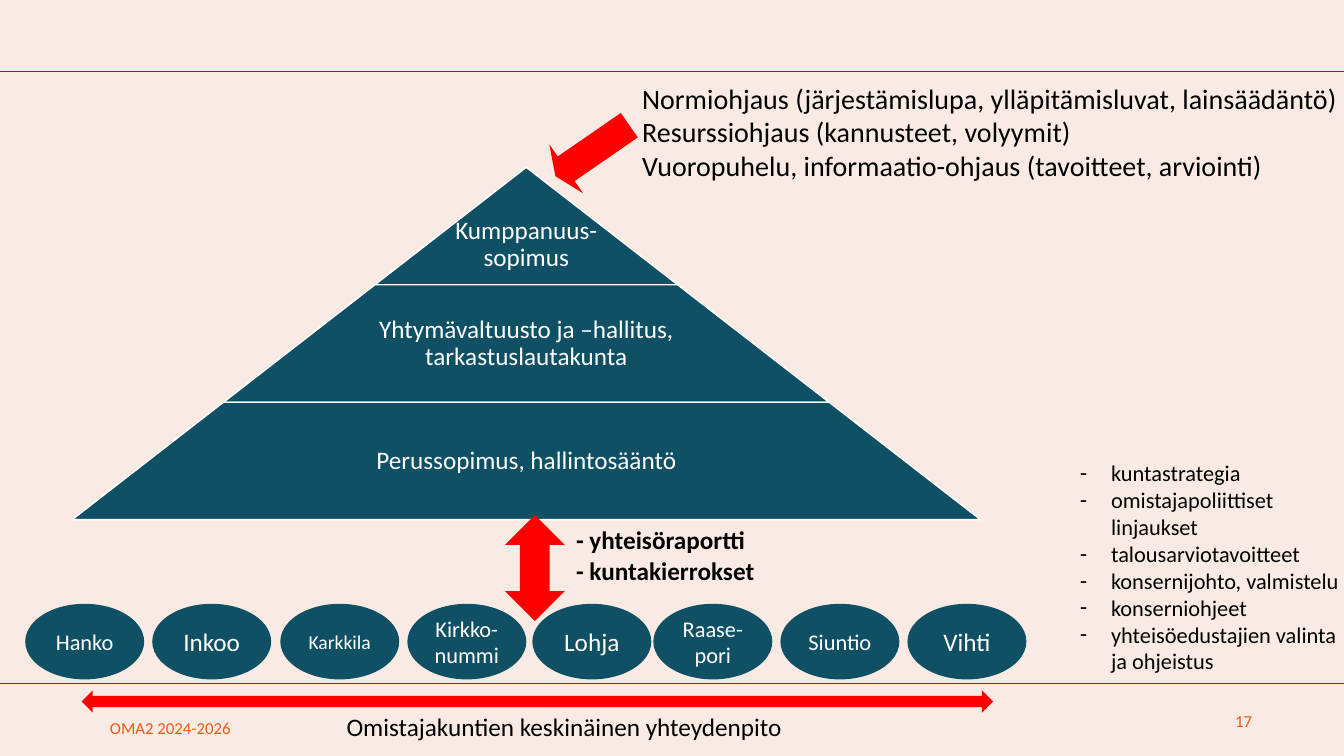
from lxml.etree import SubElement
from pptx import Presentation
from pptx.dml.color import RGBColor
from pptx.enum.shapes import MSO_CONNECTOR, MSO_SHAPE
from pptx.enum.text import MSO_ANCHOR, MSO_AUTO_SIZE, PP_ALIGN
from pptx.oxml.ns import qn
from pptx.util import Inches, Pt

COLORS = {"background": "F9EBE3", "rule": "115064", "teal": "0F5064",
          "red": "FF0000", "orange": "EB5C18", "white": "FFFFFF", "black": "000000"}
FONT = "Calibri"

# Content: pyramid tiers from the top as (text, text width, top inset)
TIERS = [("Kumppanuus-\vsopimus", 3, 0.41),
         ("Yhtymävaltuusto ja –hallitus, tarkastuslautakunta", 3.9, 0.03),
         ("Perussopimus, hallintosääntö", 5.86, 0.03)]
# Municipalities as (name, left, text size)
MUNICIPALITIES = [("Hanko", 0.25, 16), ("Inkoo", 1.51, 18), ("Karkkila", 2.78, 14),
                  ("Kirkko-nummi", 4.04, 16), ("Lohja", 5.28, 18),
                  ("Raase-pori", 6.48, 16), ("Siuntio", 7.74, 16), ("Vihti", 9, 18)]
STEERING = ["Normiohjaus (järjestämislupa, ylläpitämisluvat, lainsäädäntö)",
            "Resurssiohjaus (kannusteet, volyymit)",
            "Vuoropuhelu, informaatio-ohjaus (tavoitteet, arviointi)"]
DIALOGUE = ["- yhteisöraportti", "- kuntakierrokset"]
OWNER_TOOLS = ["kuntastrategia", "omistajapoliittiset linjaukset", "talousarviotavoitteet",
               "konsernijohto, valmistelu", "konserniohjeet",
               "yhteisöedustajien valinta ja ohjeistus"]
CONTACT = "Omistajakuntien keskinäinen yhteydenpito"
FOOTER, PAGE_NUMBER = "OMA2 2024-2026", "17"

# Geometry
PYRAMID_CENTER, PYRAMID_TOP = 5.22, 1.66
TIER_STEP, TIER_WIDTH_STEP = 1.165, 3.003
RULE_TOPS = [0.71, 6.78]


def color(name):
    return RGBColor.from_string(COLORS[name])


def inches(*values):
    return [Inches(value) for value in values]


def write(shape, lines, size, font_color="black", align=PP_ALIGN.LEFT, bold=False,
          insets=(0.1, 0.05, 0.1, 0.05), line_spacing=1.0, bullet=None):
    frame = shape.text_frame
    frame.text = "\n".join(lines)
    frame.word_wrap = True
    frame.auto_size = MSO_AUTO_SIZE.NONE
    frame.vertical_anchor = MSO_ANCHOR.MIDDLE
    (frame.margin_left, frame.margin_top,
     frame.margin_right, frame.margin_bottom) = inches(*insets)
    for paragraph in frame.paragraphs:
        paragraph.alignment = align
        paragraph.line_spacing = line_spacing
        paragraph.space_before = Pt(0)
        if bullet:
            properties = paragraph._p.get_or_add_pPr()
            properties.set("marL", str(Inches(0.31)))
            properties.set("indent", str(-Inches(0.31)))
            SubElement(properties, qn("a:buChar")).set("char", bullet)
        for run in paragraph.runs:
            run.font.name = FONT
            run.font.size = Pt(size)
            run.font.bold = bold
            run.font.color.rgb = color(font_color)


def add_text(box, lines, size, **options):
    write(slide.shapes.add_textbox(*inches(*box)), lines, size, **options)


def add_shape(kind, box, fill=None, line=None):
    shape = slide.shapes.add_shape(kind, *inches(*box))
    shape.shadow.inherit = False
    if fill:
        shape.fill.solid()
        shape.fill.fore_color.rgb = color(fill)
    else:
        shape.fill.background()
    if line:
        shape.line.color.rgb = color(line)
        shape.line.width = Pt(1)
    else:
        shape.line.fill.background()
    return shape


presentation = Presentation()
presentation.slide_width, presentation.slide_height = inches(13.33, 7.5)
slide = presentation.slides.add_slide(presentation.slide_layouts[1])
slide.background.fill.solid()
slide.background.fill.fore_color.rgb = color("background")
title = slide.shapes.title
title.element.getparent().remove(title.element)

# Horizontal rules
for top in RULE_TOPS:
    rule = slide.shapes.add_connector(MSO_CONNECTOR.STRAIGHT, *inches(0, top, 13.33, top))
    rule.line.color.rgb = color("rule")
    rule.line.width = Pt(0.48)
    SubElement(rule.element.spPr, qn("a:effectLst"))

# Pyramid
for index, (text, text_width, top_inset) in enumerate(TIERS):
    width = TIER_WIDTH_STEP * (index + 1)
    top = PYRAMID_TOP + TIER_STEP * index
    tier = add_shape(MSO_SHAPE.TRAPEZOID,
                     (PYRAMID_CENTER - width / 2, top, width, TIER_STEP), "teal", "white")
    tier.adjustments[0] = TIER_WIDTH_STEP / 2 / TIER_STEP
    add_text((PYRAMID_CENTER - text_width / 2, top, text_width, TIER_STEP), [text], 18,
             font_color="white", align=PP_ALIGN.CENTER, line_spacing=0.9,
             insets=(0.03, top_inset, 0.03, 0.03))

# Steering from above
add_text((6.27, 0.86, 7.21, 0.89), STEERING, 20)
steering_arrow = add_shape(MSO_SHAPE.UP_ARROW, (5.58, 1.05, 0.59, 0.89), "red")
steering_arrow.rotation = 235.4
steering_arrow.adjustments[1] = 0.22

# Dialogue between the pyramid and the municipalities
write(add_shape(MSO_SHAPE.ROUNDED_RECTANGLE, (5.59, 5.24, 2.6, 0.53)),
      DIALOGUE, 18, bold=True)
add_shape(MSO_SHAPE.UP_DOWN_ARROW, (5.01, 5.11, 0.59, 1.05), "red")

# Municipalities
for name, left, size in MUNICIPALITIES:
    oval = add_shape(MSO_SHAPE.OVAL, (left, 5.99, 1.18, 0.75), "teal")
    write(oval, [name], size, font_color="white", align=PP_ALIGN.CENTER,
          insets=(0.05, 0.05, 0.05, 0.05))

# Contact between the owners
add_shape(MSO_SHAPE.LEFT_RIGHT_ARROW, (0.81, 6.85, 9.04, 0.22), "red")
add_text((3.19, 7.02, 4.81, 0.38), [CONTACT], 18, align=PP_ALIGN.CENTER)

# Owner steering list
owner_list = slide.placeholders[1]
owner_list.left, owner_list.top, owner_list.width, owner_list.height = inches(
    10.61, 4.63, 2.82, 1.99)
write(owner_list, OWNER_TOOLS, 16, bullet="-")

# Footer
add_text((1.09, 7.03, 4.02, 0.38), [FOOTER], 12, font_color="orange", insets=(0, 0, 0, 0))
add_text((9.42, 6.96, 3, 0.38), [PAGE_NUMBER], 12, font_color="orange",
         align=PP_ALIGN.RIGHT, insets=(0, 0, 0, 0))

presentation.save("out.pptx")
